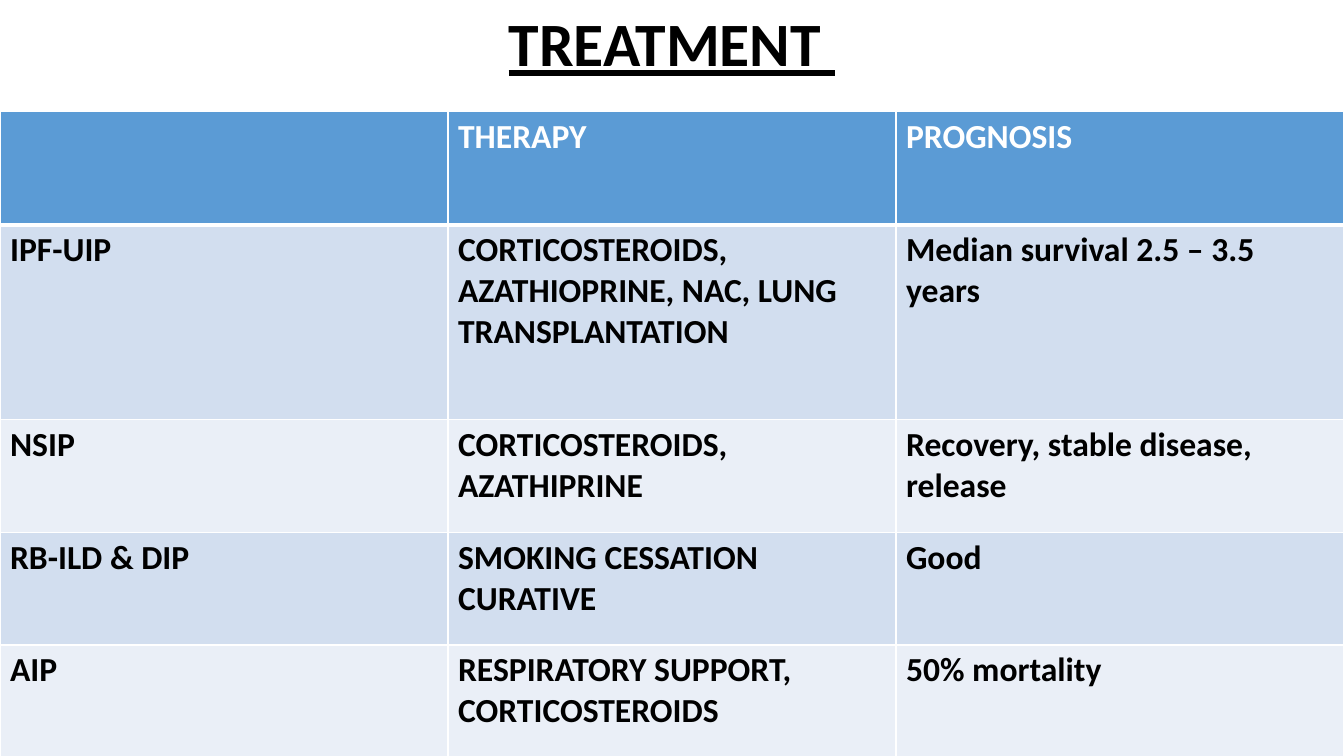
from lxml import etree
from pptx import Presentation
from pptx.dml.color import RGBColor
from pptx.enum.text import MSO_ANCHOR, PP_ALIGN
from pptx.oxml.ns import qn
from pptx.util import Inches, Pt

CENTER = PP_ALIGN.CENTER
MIDDLE = MSO_ANCHOR.MIDDLE
FONT = "Calibri"
COLORS = {
    "text": "000000",
    "header": "5B9BD5",
    "odd": "D2DEEF",
    "even": "EAEFF7",
    "white": "FFFFFF",
}
ROWS = [
    ["", "THERAPY", "PROGNOSIS"],
    ["IPF-UIP", "CORTICOSTEROIDS, AZATHIOPRINE, NAC, LUNG TRANSPLANTATION",
     "Median survival 2.5 – 3.5 years"],
    ["NSIP", "CORTICOSTEROIDS, AZATHIPRINE", "Recovery, stable disease, release"],
    ["RB-ILD & DIP", "SMOKING CESSATION CURATIVE", "Good"],
    ["AIP", "RESPIRATORY SUPPORT, CORTICOSTEROIDS", "50% mortality"],
]
ROW_HEIGHTS = [1.12, 1.93, 1.12, 1.12, 1.12]
TABLE_TOP = 1.11


def add_run(p, text, size, color):
    r = p.add_run()
    r.text = text
    r.font.name = FONT
    r.font.size = Pt(size)
    r.font.bold = True
    r.font.color.rgb = RGBColor.from_string(COLORS[color])
    return r


def add_borders(cell, bottom_width):
    """Draw white cell edges, 1 pt except for the bottom one."""
    tc_pr = cell._tc.get_or_add_tcPr()
    for side, width in (("L", 1), ("R", 1), ("T", 1), ("B", bottom_width)):
        ln = etree.SubElement(tc_pr, qn(f"a:ln{side}"), w=str(Pt(width)))
        fill = etree.SubElement(ln, qn("a:solidFill"))
        etree.SubElement(fill, qn("a:srgbClr"), val=COLORS["white"])


prs = Presentation()
prs.slide_width = Inches(13.33)
prs.slide_height = Inches(7.5)
s = prs.slides.add_slide(prs.slide_layouts[5])

title = s.shapes.title
title.left, title.top = 0, 0
title.width, title.height = prs.slide_width, Inches(0.93)
tf = title.text_frame
tf.vertical_anchor = MIDDLE
p = tf.paragraphs[0]
p.alignment = CENTER
p.line_spacing = 0.9
add_run(p, "TREATMENT ", 44, "text").font.underline = True

table = s.shapes.add_table(
    len(ROWS), len(ROWS[0]), 0, Inches(TABLE_TOP),
    prs.slide_width, Inches(sum(ROW_HEIGHTS))).table

for i, (texts, height) in enumerate(zip(ROWS, ROW_HEIGHTS)):
    table.rows[i].height = Inches(height)
    is_header = i == 0
    fill_color = "header" if is_header else "odd" if i % 2 else "even"
    for j, text in enumerate(texts):
        cell = table.cell(i, j)
        add_borders(cell, 3 if is_header else 1)
        cell.fill.solid()
        cell.fill.fore_color.rgb = RGBColor.from_string(COLORS[fill_color])
        if text:
            add_run(cell.text_frame.paragraphs[0], text, 24,
                    "white" if is_header else "text")

prs.save("out.pptx")
